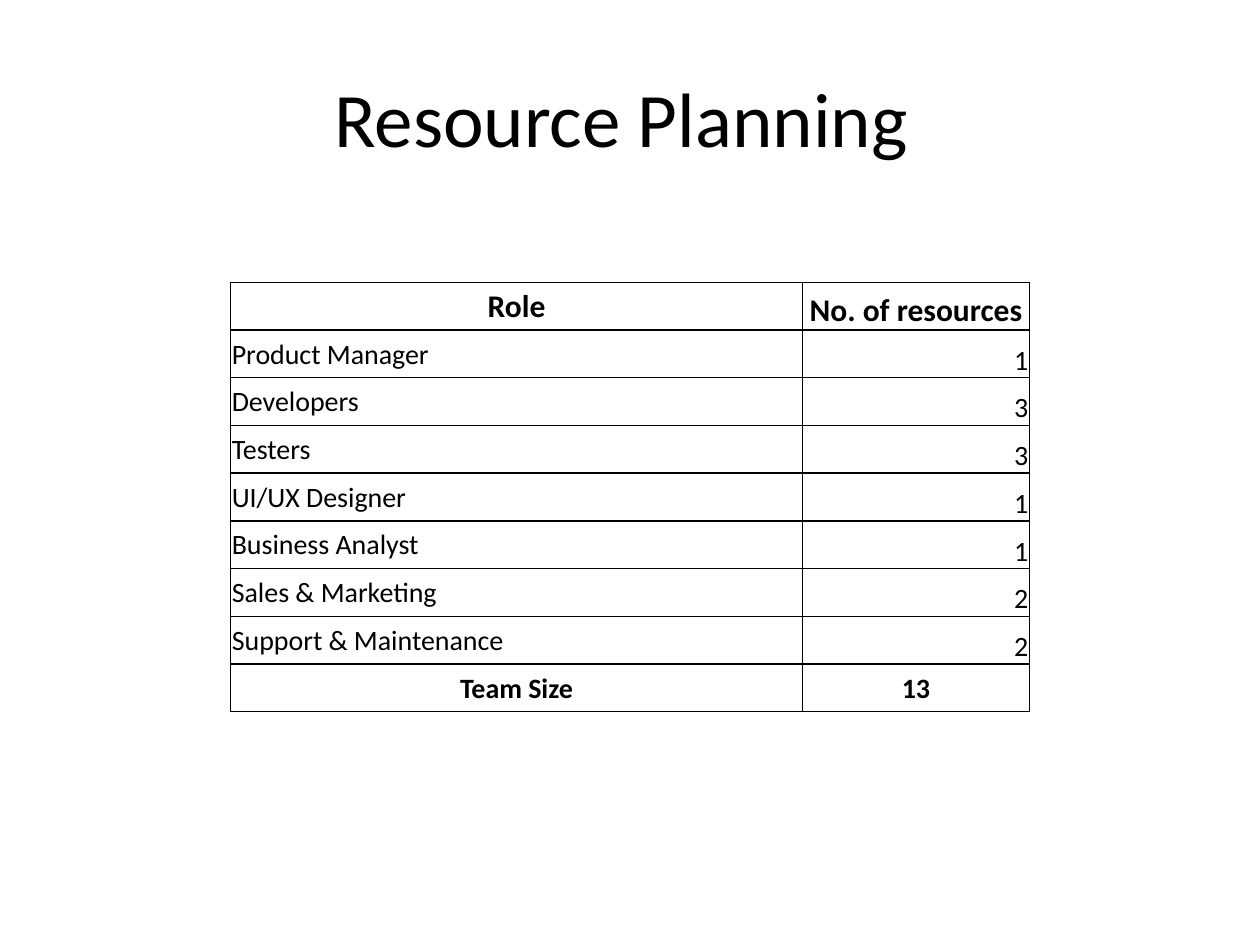
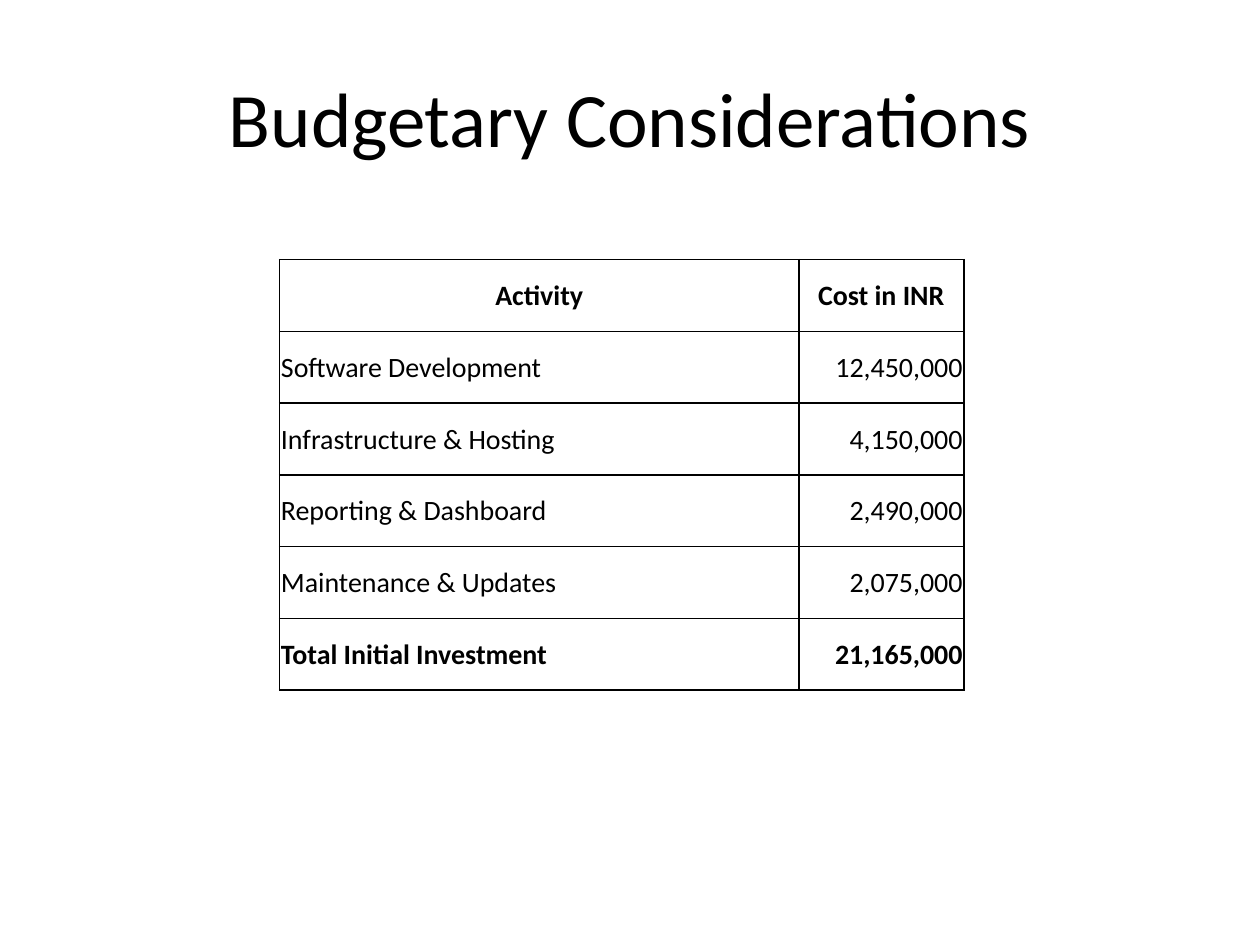
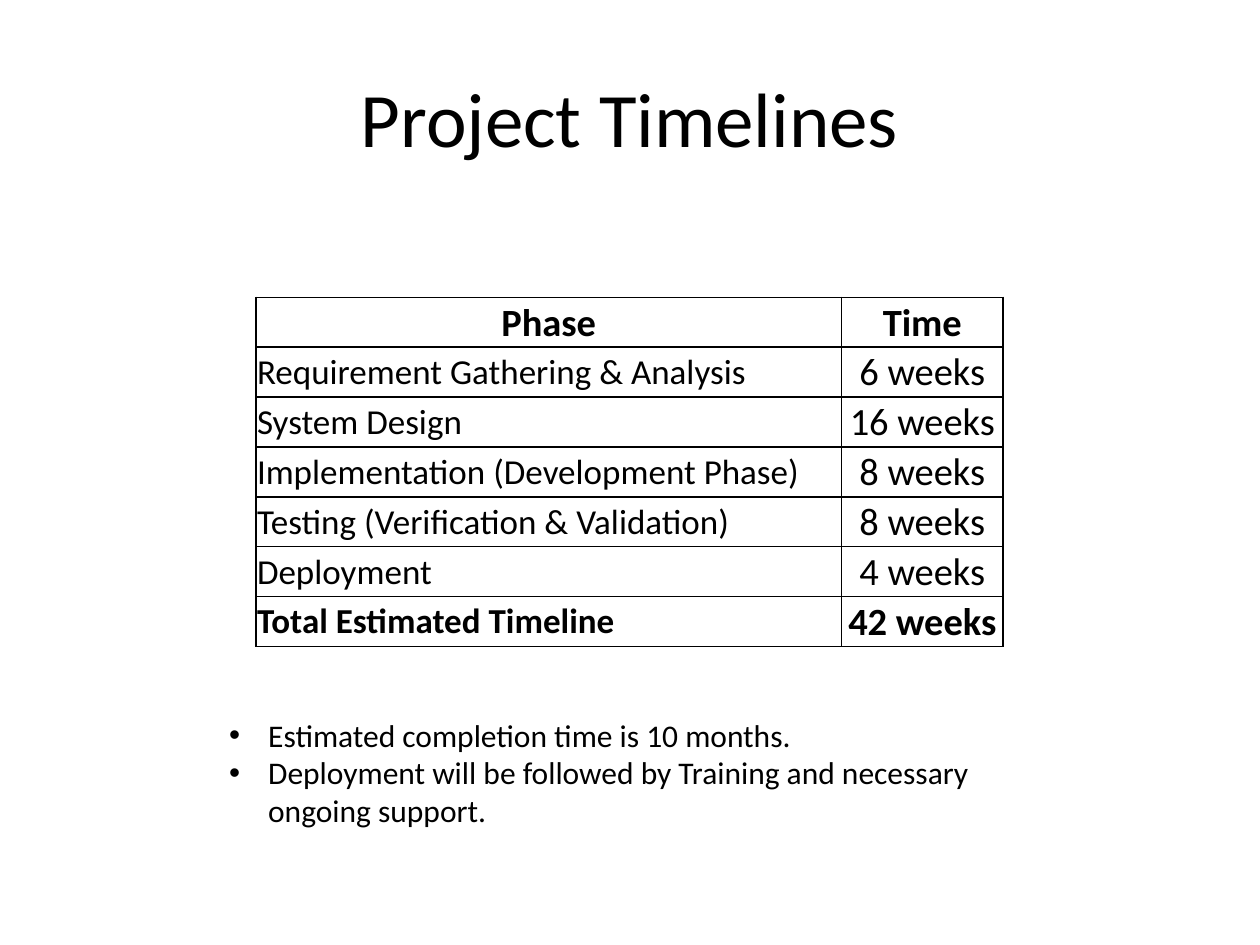
from dataclasses import dataclass

from lxml import etree
from pptx import Presentation
from pptx import util as u
from pptx.dml.color import RGBColor
from pptx.enum import text
from pptx.oxml import ns

LEFT, CENTER, RIGHT = text.PP_ALIGN.LEFT, text.PP_ALIGN.CENTER, text.PP_ALIGN.RIGHT
MIDDLE, BOTTOM = text.MSO_ANCHOR.MIDDLE, text.MSO_ANCHOR.BOTTOM


@dataclass(frozen=True)
class Theme:
    """Colours, font, type sizes and shared measures of the deck."""

    ink: str = "000000"
    paper: str = "FFFFFF"
    font: str = "Calibri"
    title_size: int = 44
    large_size: int = 22
    medium_size: int = 20
    note_size: int = 18
    small_size: int = 16
    border: float = 1
    cell_inset: float = 0.01
    bullet_indent: float = 0.31
    title_box: tuple = (0.5, 0.3, 9, 1.25)


@dataclass(frozen=True)
class CellStyle:
    """Type size, weight and alignment of a table cell."""

    size: int
    align: int = LEFT
    bold: bool = False
    anchor: int = MIDDLE


THEME = Theme()


def apply(target, values):
    """Set each named attribute of the target."""
    for name, value in values.items():
        setattr(target, name, value)


def place(shape, box):
    """Move and size a shape to a box in inches."""
    apply(shape, dict(zip(("left", "top", "width", "height"), map(u.Inches, box))))


def write(para, words, size, align=LEFT, bold=False):
    """Write one formatted span into a paragraph."""
    para.alignment = align
    span = para.add_run()
    span.text = words
    apply(span.font, {"name": THEME.font, "size": u.Pt(size), "bold": bold})
    span.font.color.rgb = RGBColor.from_string(THEME.ink)


def add_page(deck, title):
    """Add a title-only page with its title in place."""
    page = deck.slides.add_slide(deck.slide_layouts[5])
    place(page.shapes.title, THEME.title_box)
    frame = page.shapes.title.text_frame
    apply(frame, {"vertical_anchor": MIDDLE, "word_wrap": True})
    write(frame.paragraphs[0], title, THEME.title_size, CENTER)
    return page


def outline(cell):
    """Draw a thin line on all four sides of a cell."""
    properties = cell._tc.get_or_add_tcPr()
    for position, side in enumerate(("lnL", "lnR", "lnT", "lnB")):
        line = etree.Element(ns.qn(f"a:{side}"), w=str(u.Pt(THEME.border)))
        fill = etree.SubElement(line, ns.qn("a:solidFill"))
        etree.SubElement(fill, ns.qn("a:srgbClr"), val=THEME.ink)
        properties.insert(position, line)


def fill_cell(cell, words, style):
    """Fill, outline and write one table cell."""
    cell.fill.solid()
    cell.fill.fore_color.rgb = RGBColor.from_string(THEME.paper)
    inset = u.Inches(THEME.cell_inset)
    apply(cell, {"margin_left": inset, "margin_right": inset, "margin_top": inset,
                 "margin_bottom": 0, "vertical_anchor": style.anchor})
    write(cell.text_frame.paragraphs[0], words, style.size, style.align, style.bold)
    outline(cell)


def add_grid(page, box, first_width, rows, header, body, total):
    """Add a two-column table with header, body and total row styles."""
    grid = page.shapes.add_table(len(rows), 2, *map(u.Inches, box)).table
    apply(grid, {"first_row": False, "horz_banding": False})
    for column, width in zip(grid.columns, (first_width, box[2] - first_width)):
        column.width = u.Inches(width)
    styles = [header] + [body] * (len(rows) - 2) + [total]
    for line, values, row_styles in zip(grid.rows, rows, styles):
        line.height = u.Inches(box[3] / len(rows))
        for cell, words, style in zip(line.cells, values, row_styles):
            fill_cell(cell, words, style)


def add_notes_list(page, box, lines):
    """Add a bulleted text box."""
    frame = page.shapes.add_textbox(*map(u.Inches, box)).text_frame
    apply(frame, {"word_wrap": True, "auto_size": text.MSO_AUTO_SIZE.SHAPE_TO_FIT_TEXT})
    indent = u.Inches(THEME.bullet_indent)
    for index, words in enumerate(lines):
        para = frame.add_paragraph() if index else frame.paragraphs[0]
        write(para, words, THEME.note_size)
        properties = para._p.get_or_add_pPr()
        properties.set("marL", str(indent))
        properties.set("indent", str(-indent))
        etree.SubElement(properties, ns.qn("a:buFont"), typeface="Arial")
        etree.SubElement(properties, ns.qn("a:buChar"), char="•")


def build_resources(deck):
    """Build the page of roles and head counts."""
    page = add_page(deck, "Resource Planning ")
    rows = [
        ("Role", "No. of resources"),
        ("Product Manager", "1"),
        ("Developers", "3"),
        ("Testers", "3"),
        ("UI/UX Designer", "1"),
        ("Business Analyst", "1"),
        ("Sales & Marketing", "2"),
        ("Support & Maintenance", "2"),
        ("Team Size", "13"),
    ]
    small, note = THEME.small_size, THEME.note_size
    add_grid(page, (1.83, 2.24, 6.34, 3.41), 4.54, rows,
             header=(CellStyle(note, CENTER, True), CellStyle(note, CENTER, True, BOTTOM)),
             body=(CellStyle(small), CellStyle(small, RIGHT, anchor=BOTTOM)),
             total=(CellStyle(small, CENTER, True),) * 2)


def build_budget(deck):
    """Build the page of activities and costs."""
    page = add_page(deck, "Budgetary Considerations")
    rows = [
        ("Activity", "Cost in INR"),
        ("Software Development", "12,450,000"),
        ("Infrastructure & Hosting", "4,150,000"),
        ("Reporting & Dashboard", "2,490,000"),
        ("Maintenance & Updates", "2,075,000"),
        ("Total Initial Investment", "21,165,000"),
    ]
    small = THEME.small_size
    add_grid(page, (2.22, 2.06, 5.43, 3.42), 4.12, rows,
             header=(CellStyle(small, CENTER, True),) * 2,
             body=(CellStyle(small), CellStyle(small, RIGHT)),
             total=(CellStyle(small, LEFT, True), CellStyle(small, RIGHT, True)))


def build_timeline(deck):
    """Build the page of phases and durations."""
    page = add_page(deck, "Project Timelines")
    rows = [
        ("Phase", "Time"),
        ("Requirement Gathering & Analysis", "6 weeks"),
        ("System Design", "16 weeks"),
        ("Implementation (Development Phase)", "8 weeks"),
        ("Testing (Verification & Validation)", "8 weeks"),
        ("Deployment", "4 weeks"),
        ("Total Estimated Timeline", "42 weeks"),
    ]
    medium, large = THEME.medium_size, THEME.large_size
    add_grid(page, (2.03, 2.36, 5.93, 2.77), 4.65, rows,
             header=(CellStyle(large, CENTER, True),) * 2,
             body=(CellStyle(medium), CellStyle(large, CENTER)),
             total=(CellStyle(medium, LEFT, True), CellStyle(large, CENTER, True)))
    add_notes_list(page, (1.72, 5.63, 6.59, 1.01), [
        "Estimated completion time is 10 months.",
        "Deployment will be followed by Training and necessary ongoing support.",
    ])


def main():
    """Build and save the deck."""
    deck = Presentation()
    apply(deck, {"slide_width": u.Inches(10), "slide_height": u.Inches(7.5)})
    for build in (build_resources, build_budget, build_timeline):
        build(deck)
    deck.save("out.pptx")


if __name__ == "__main__":
    main()
